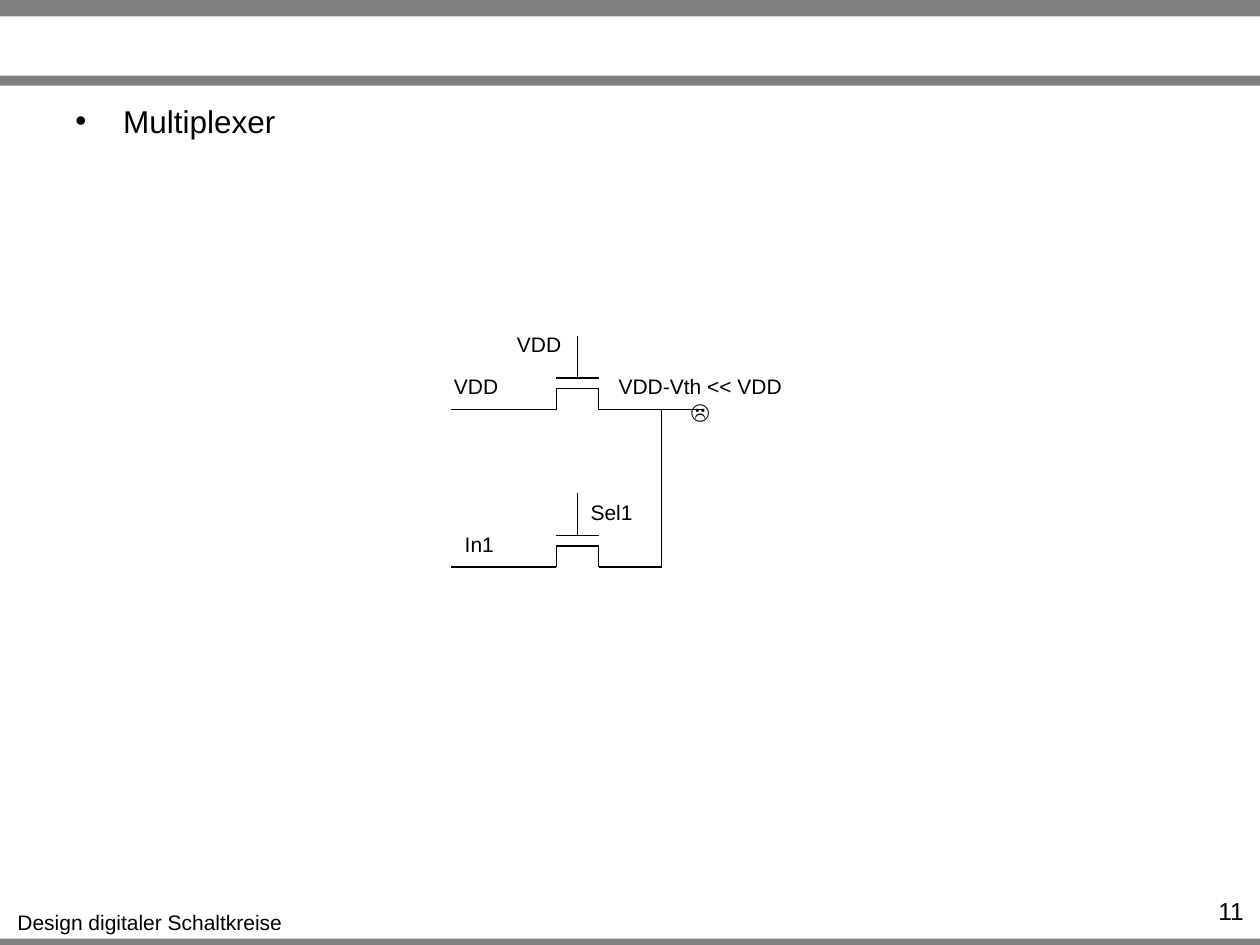
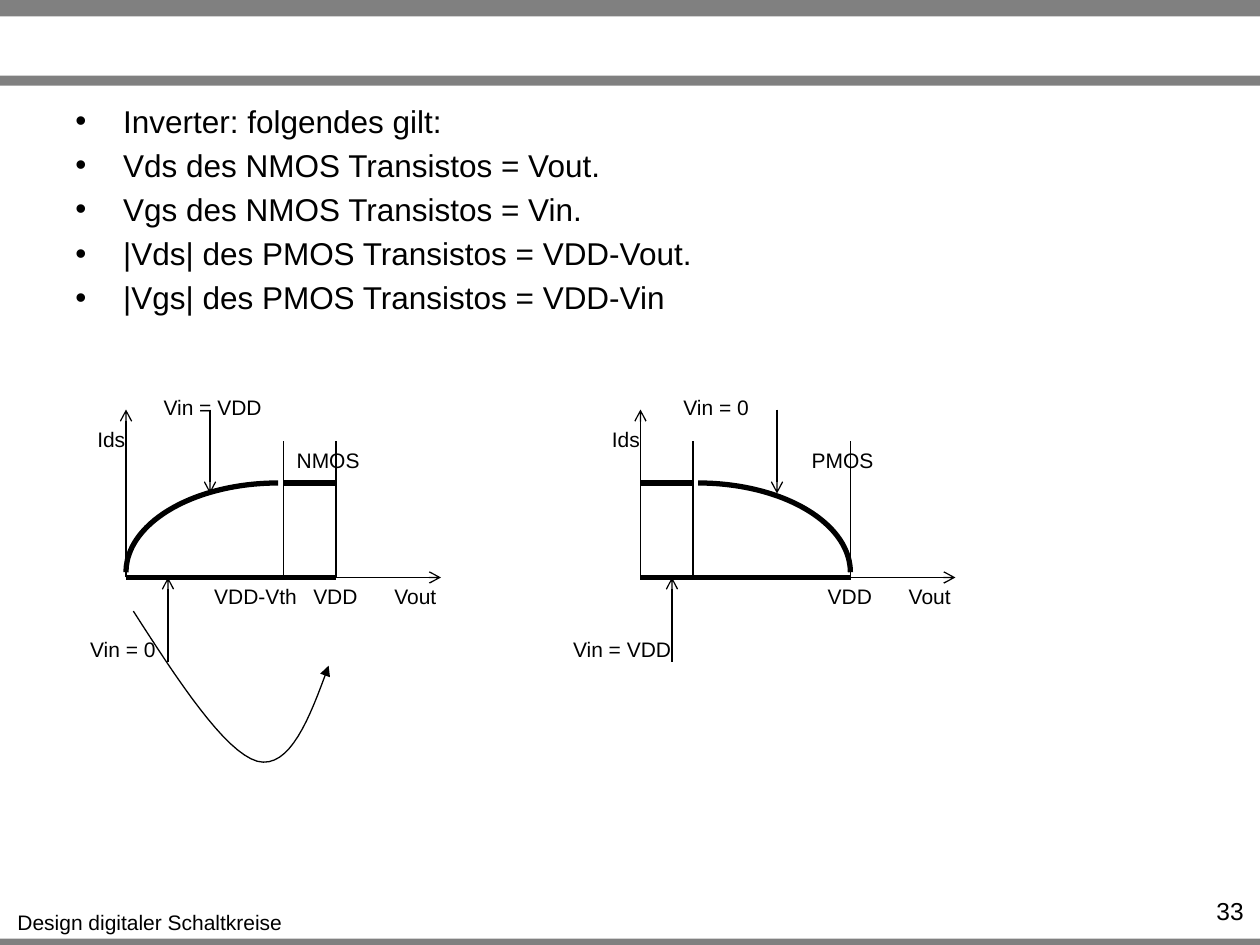
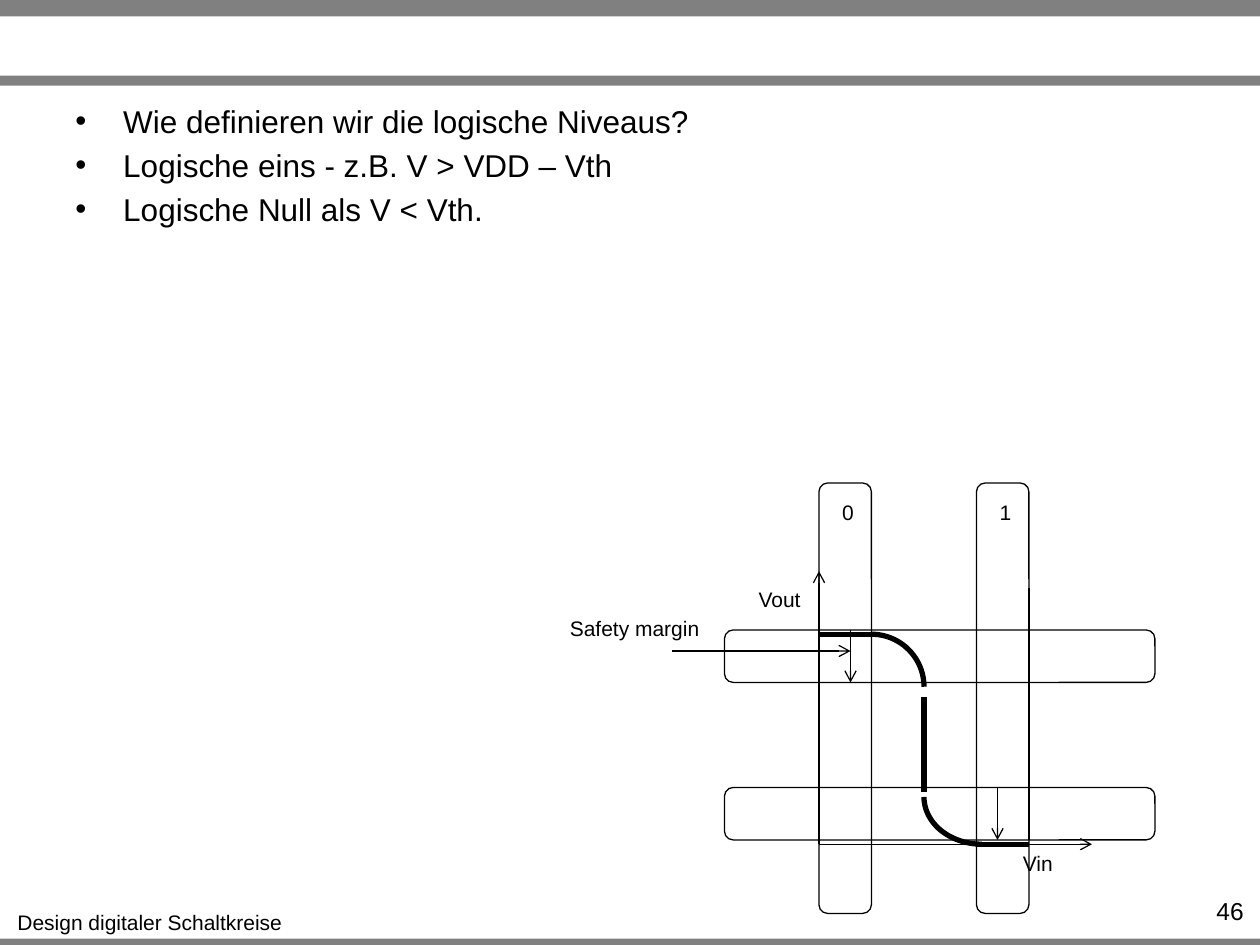
from dataclasses import dataclass
from typing import Any

from lxml.etree import SubElement
from pptx import Presentation
from pptx.dml.color import RGBColor
from pptx.enum.shapes import MSO_CONNECTOR as Connector, MSO_SHAPE as Shape
from pptx.enum.text import MSO_AUTO_SIZE as AutoSize, PP_ALIGN as Align
from pptx.oxml.ns import qn
from pptx.util import Emu, Inches, Pt

COLORS = {"ink": "000000", "band": "808080"}
FONT = "Arial"
WIDTH, HEIGHT = Inches(10), Inches(7.5)
COLUMNS = 120
UNIT = WIDTH / COLUMNS  # the grid is square: 120 columns by 90 rows
THIN, THICK = 0.75, 3
LABEL_HEIGHT = 3.6
LABEL_WIDTHS = {  # in columns
    "VDD": 6.7, "Vout": 6.5, "Vin": 5.3, "Ids": 5.2, "Sel1": 6.5, "In1": 5.3,
    "VDD-Vth": 10.3, "Vin = VDD": 11.9, "Vin = 0": 8.8, "NMOS": 8.5, "PMOS": 8.5,
    "0": 3.5, "1": 3.5, "Safety margin": 14.9, "VDD-Vth << VDD\n☹": 20.2,
}
QUARTERS = {"top left": (180, 270), "top right": (270, 0), "bottom left": (90, 180)}


def color(name):
    return RGBColor.from_string(COLORS[name])


def grid(*lengths):
    return [Emu(round(length * UNIT)) for length in lengths]


def write(para, text, size):
    for index, part in enumerate(text.split("\n")):
        if index:
            para.add_line_break()
        span = para.add_run()
        span.text = part
        span.font.name, span.font.size = FONT, Pt(size)
        span.font.color.rgb = color("ink")


def outline(shape, weight, arrow=None):
    """Give a shape or connector a plain ink line, with an optional arrowhead."""
    shape.line.color.rgb = color("ink")
    shape.line.width = Pt(weight)
    properties = shape._element.spPr
    if arrow:
        SubElement(properties.find(qn("a:ln")), qn("a:tailEnd"), type=arrow)
    if properties.find(qn("a:effectLst")) is None:
        SubElement(properties, qn("a:effectLst"))


@dataclass
class Region:
    """Draws in grid units, measured from its own top left corner."""
    shapes: Any
    left: float
    top: float

    def place(self, x, y):
        return grid(self.left + x, self.top + y)

    def wire(self, x1, y1, x2, y2, weight=THIN, arrow=None):
        line = self.shapes.add_connector(
            Connector.STRAIGHT, *self.place(x1, y1), *self.place(x2, y2))
        outline(line, weight, arrow)

    def outlined(self, kind, x, y, width, height, weight=THIN):
        shape = self.shapes.add_shape(kind, *self.place(x, y), *grid(width, height))
        shape.fill.background()
        outline(shape, weight)
        return shape

    def quarter(self, corner, x, y, width, height):
        """Draw one quarter of the ellipse that fills the given box."""
        arc = self.outlined(Shape.ARC, x, y, width, height, THICK)
        for index, angle in enumerate(QUARTERS[corner]):
            arc.adjustments[index] = angle * 0.6  # 60000ths of a degree over 100000

    def label(self, text, x, y):
        add_label(self.shapes, text, *self.place(x, y),
                  *grid(LABEL_WIDTHS[text], LABEL_HEIGHT))

    def curve(self, start, *segments):
        """Draw a chain of cubic curves that ends in an arrowhead."""
        points = [start]
        for controls in segments:
            ends = (points[-1], *controls)
            points += [cubic(ends, step / 16) for step in range(1, 17)]
        pen = self.shapes.build_freeform(*self.place(*start))
        pen.add_line_segments([self.place(*point) for point in points[1:]], close=False)
        sweep = pen.convert_to_shape()
        sweep.fill.background()
        outline(sweep, THIN, "triangle")


def cubic(ends, t):
    weights = ((1 - t) ** 3, 3 * t * (1 - t) ** 2, 3 * t * t * (1 - t), t ** 3)
    return tuple(sum(w * end[axis] for w, end in zip(weights, ends)) for axis in (0, 1))


def add_label(shapes, text, *box):
    frame = shapes.add_textbox(*box).text_frame
    frame.word_wrap = False
    frame.auto_size = AutoSize.SHAPE_TO_FIT_TEXT
    frame.paragraphs[0].alignment = Align.CENTER
    write(frame.paragraphs[0], text, 12)


def add_bullets(page, lines):
    frame = page.shapes.add_textbox(
        Inches(0.5), Inches(0.76), Inches(9), Inches(0.66)).text_frame
    frame.word_wrap = True
    for index, line in enumerate(lines):
        para = frame.add_paragraph() if index else frame.paragraphs[0]
        properties = para._p.get_or_add_pPr()
        properties.set("marL", str(Inches(0.38)))
        properties.set("indent", str(-Inches(0.38)))
        if index:
            para.space_before = Pt(3.6)
        SubElement(properties, qn("a:buFont"), typeface=FONT)
        SubElement(properties, qn("a:buChar"), char="•")
        write(para, line, 18)


def add_page(deck, number, bullets):
    """Add a slide with bands, footer, page number and bullets."""
    page = deck.slides.add_slide(deck.slide_layouts[6])
    for top, height in ((7.45, 0.05), (0, 0.13), (0.6, 0.08)):
        band = page.shapes.add_shape(Shape.RECTANGLE, 0, Inches(top), WIDTH, Inches(height))
        band.shadow.inherit = False
        band.fill.solid()
        band.fill.fore_color.rgb = color("band")
        band.line.fill.background()
    add_label(page.shapes, "Design digitaler Schaltkreise",
              Inches(0.03), Inches(7.17), Inches(2.32), Inches(0.3))
    add_bullets(page, bullets)
    frame = page.shapes.add_textbox(
        Inches(9.1), Inches(7.06), Inches(0.87), Inches(0.24)).text_frame
    frame.word_wrap = True
    frame.paragraphs[0].alignment = Align.RIGHT
    write(frame.paragraphs[0], str(number), 14)
    return page


def draw_transistor(page, left, top):
    symbol = Region(page.shapes.add_group_shape().shapes, left, top)
    for ends in ((3, 7, 3, 5), (3, 5, 7, 5), (5, 2, 5, 4), (3, 4, 7, 4),
                 (7, 7, 7, 5), (7, 7, 10, 7), (0, 7, 3, 7), (5, 2, 5, 0)):
        symbol.wire(*ends)


def draw_multiplexer(page, left, top):
    for row in (0, 15):
        draw_transistor(page, left + 7, top + row)
    circuit = Region(page.shapes, left, top)
    for ends in ((20, 7, 20, 22), (17, 7, 24, 7), (20, 22, 17, 22),
                 (7, 7, 0, 7), (7, 22, 0, 22)):
        circuit.wire(*ends)
    for text, x, y in (("Sel1", 12, 15), ("In1", 0, 18), ("VDD", 5, -1),
                       ("VDD", -1, 3), ("VDD-Vth << VDD\n☹", 13.6, 3)):
        circuit.label(text, x, y)


def draw_characteristic(page, left, top, name, corner, arc_left, flat, knee,
                        high, low, labels):
    """Plot Ids over Vout; high and low are the columns of the two Vin arrows."""
    plot = Region(page.shapes, left, top)
    base, crest, supply = 16, 7, 20
    plot.wire(0, base, 30, base, arrow="arrow")
    plot.wire(0, base, 0, 0, arrow="arrow")
    plot.quarter(corner, arc_left, crest, 29, 17)
    plot.wire(flat, crest, flat + 5, crest, THICK)
    for x in (knee, supply):
        plot.wire(x, 3, x, base)
    plot.wire(high, 0, high, 8, arrow="arrow")
    plot.wire(low, 24, low, base, arrow="arrow")
    plot.wire(0, base, supply, base, THICK)
    shared = (("Ids", -4, 1), ("Vout", 24.3, base), ("VDD", 16.6, base), (name, 15, 3))
    for text, x, y in shared + labels:
        plot.label(text, x, y)
    return plot


def draw_inverter_plots(page, left, top):
    nmos = draw_characteristic(
        page, left, top, "NMOS", "top left", 0, flat=15, knee=15, high=8, low=4,
        labels=(("Vin = VDD", 2.3, -2), ("Vin = 0", -4.7, 21), ("VDD-Vth", 7.2, 16)))
    draw_characteristic(
        page, left + 49, top, "PMOS", "top right", -9, flat=0, knee=5, high=13, low=3,
        labels=(("Vin = 0", 2.8, -2), ("Vin = VDD", -7.7, 21)))
    nmos.curve((0.7, 19.2),
               ((5, 25.9), (9.4, 32.6), (12.5, 33.5)),
               ((15.6, 34.3), (17.5, 29.4), (19.3, 24.4)))


def draw_logic_levels(page, left, top):
    plot = Region(page.shapes, left, top)
    high, low = 14.4, 34.4
    plot.wire(0, low, 26, low, arrow="arrow")
    plot.wire(0, low, 0, 8.4, arrow="arrow")
    for ends in ((15, low, 20, low), (0, high, 5, high), (10, 29.4, 10, 20.4)):
        plot.wire(*ends, weight=THICK)
    plot.quarter("bottom left", 10, 25.4, 11, 9)
    plot.quarter("top right", 0, high, 10, 10)
    for x in (5, 15, 20):
        plot.wire(x, 34, x, 10)
    for x in (0, 15):
        plot.outlined(Shape.ROUNDED_RECTANGLE, x, 0, 5, 41)
        plot.outlined(Shape.ROUNDED_RECTANGLE, -9, 14 + x, 41, 5)
    for ends in ((3, 14, 3, 19), (17, 29, 17, 34), (-14, 16, 3, 16)):
        plot.wire(*ends, arrow="arrow")
    for text, x, y in (("Vout", -7, 9.3), ("Vin", 18.2, low), ("0", 1, 1),
                       ("1", 16, 1), ("Safety margin", -25, 12)):
        plot.label(text, x, y)


def main():
    deck = Presentation()
    deck.slide_width, deck.slide_height = WIDTH, HEIGHT
    draw_multiplexer(add_page(deck, 11, ["Multiplexer"]), 43, 32)
    draw_inverter_plots(add_page(deck, 33, [
        "Inverter: folgendes gilt:",
        "Vds des NMOS Transistos = Vout.",
        "Vgs des NMOS Transistos = Vin.",
        "|Vds| des PMOS Transistos = VDD-Vout.",
        "|Vgs| des PMOS Transistos = VDD-Vin",
    ]), 12, 39)
    draw_logic_levels(add_page(deck, 46, [
        "Wie definieren wir die logische Niveaus?",
        "Logische eins - z.B. V > VDD – Vth",
        "Logische Null als V < Vth.",
    ]), 78, 46)
    deck.save("out.pptx")


if __name__ == "__main__":
    main()
